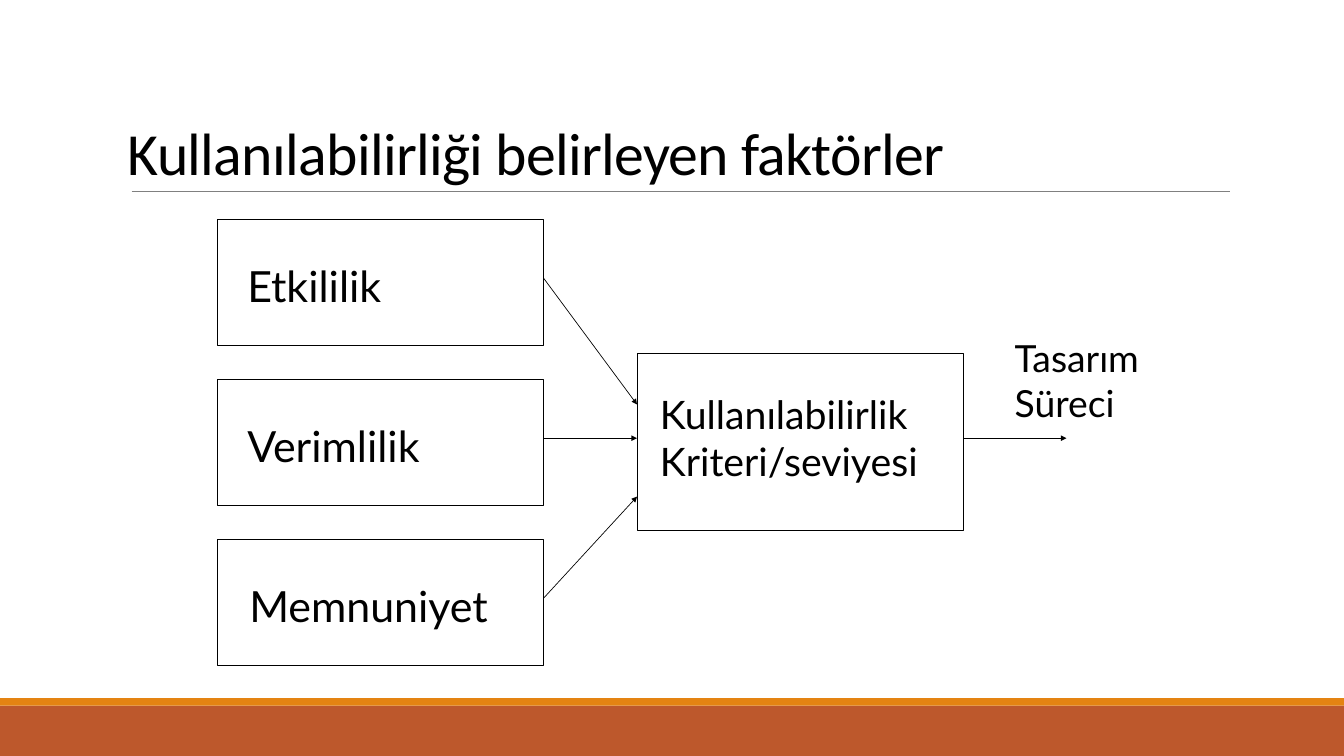
from dataclasses import dataclass

from lxml.etree import SubElement
from pptx import Presentation
from pptx.dml.color import RGBColor
from pptx.enum.shapes import MSO_CONNECTOR, MSO_SHAPE
from pptx.enum.text import MSO_ANCHOR, MSO_AUTO_SIZE, PP_ALIGN
from pptx.oxml.ns import qn
from pptx.util import Inches, Pt

BLACK = RGBColor(0x00, 0x00, 0x00)
GRAY = RGBColor(0x80, 0x80, 0x80)
RUST = RGBColor(0xBD, 0x58, 0x2C)
ORANGE = RGBColor(0xE4, 0x83, 0x12)

WIDTH, HEIGHT = Inches(20), Inches(11.25)


@dataclass(frozen=True)
class Box:
    """A rectangle in percent of the slide's width and height."""
    left: float
    top: float
    width: float
    height: float

    def emu(self) -> tuple[int, int, int, int]:
        return (*point(self.left, self.top), *point(self.width, self.height))


@dataclass(frozen=True)
class Label:
    text: str
    box: Box
    size: int


@dataclass(frozen=True)
class Line:
    """A line between two points in percent of the slide's size."""
    x1: float
    y1: float
    x2: float
    y2: float


def point(x: float, y: float) -> tuple[int, int]:
    return round(WIDTH * x / 100), round(HEIGHT * y / 100)


def add_bar(s, box: Box, color: RGBColor) -> None:
    sp = s.shapes.add_shape(MSO_SHAPE.RECTANGLE, *box.emu())
    sp.shadow.inherit = False
    sp.fill.solid()
    sp.fill.fore_color.rgb = color
    sp.line.fill.background()


def add_frame(s, box: Box) -> None:
    sp = s.shapes.add_shape(MSO_SHAPE.RECTANGLE, *box.emu())
    sp.shadow.inherit = False
    sp.fill.background()
    sp.line.color.rgb = BLACK
    sp.line.width = Pt(0.75)


def format_text(tf, font: str, size: int) -> None:
    for p in tf.paragraphs:
        p.alignment = PP_ALIGN.LEFT
        for r in p.runs:
            r.font.name = font
            r.font.size = Pt(size)
            r.font.color.rgb = BLACK


def add_label(s, label: Label) -> None:
    tf = s.shapes.add_textbox(*label.box.emu()).text_frame
    tf.word_wrap = False
    tf.auto_size = MSO_AUTO_SIZE.SHAPE_TO_FIT_TEXT
    tf.margin_left = tf.margin_right = Inches(0.2)
    tf.margin_top = tf.margin_bottom = Inches(0.1)
    tf.text = label.text
    format_text(tf, "Lato", label.size)


def add_line(s, line: Line, color: RGBColor, weight: float, arrow: bool) -> None:
    sp = s.shapes.add_connector(MSO_CONNECTOR.STRAIGHT,
                                *point(line.x1, line.y1), *point(line.x2, line.y2))
    sp.line.color.rgb = color
    sp.line.width = Pt(weight)
    if arrow:
        SubElement(sp.line._get_or_add_ln(), qn("a:tailEnd"), type="triangle")
    SubElement(sp._element.spPr, qn("a:effectLst"))


def set_title(s, text: str, box: Box) -> None:
    sp = s.shapes.title
    sp.left, sp.top, sp.width, sp.height = box.emu()
    tf = sp.text_frame
    tf.text = text
    tf.word_wrap = True
    tf.auto_size = MSO_AUTO_SIZE.NONE
    tf.vertical_anchor = MSO_ANCHOR.BOTTOM
    tf.paragraphs[0].line_spacing = 0.85
    format_text(tf, "Calibri", 64)
    for r in tf.paragraphs[0].runs:
        r._r.get_or_add_rPr().set("spc", "-70")


# Three factors stacked at an equal pitch, feeding one criterion box
FACTOR = Box(16.15, 28.98, 24.3, 16.71)
PITCH = 21.16
CRITERION = Box(47.4, 46.76, 24.3, 23.38)
FACTOR_RIGHT = FACTOR.left + FACTOR.width
CRITERION_RIGHT = CRITERION.left + CRITERION.width
ARROW_DROP = 7.82  # from a factor's top to its arrow
MIDDLE = FACTOR.top + PITCH + ARROW_DROP

# Factor name, label left, label width, height where its arrow ends
FACTORS = [
    ("Etkililik", 17.4, 13.05, 53.51),
    ("Verimlilik", 17.4, 15.95, MIDDLE),
    ("Memnuniyet", 17.55, 20.7, 65.69),
]
CRITERION_LABEL = Label("Kullanılabilirlik\nKriteri/seviyesi", Box(48.1, 50.76, 22.2, 14.4), 42)
PROCESS_LABEL = Label("Tasarım\nSüreci", Box(74.5, 43.47, 12, 13.78), 40)


def main() -> None:
    prs = Presentation()
    prs.slide_width, prs.slide_height = WIDTH, HEIGHT
    s = prs.slides.add_slide(prs.slide_layouts[5])

    add_bar(s, Box(0, 93.33, 100, 6.67), RUST)
    add_bar(s, Box(0, 92.36, 100, 0.97), ORANGE)
    add_line(s, Line(9.8, 25.33, 91.55, 25.33), GRAY, 0.5, arrow=False)
    set_title(s, "Kullanılabilirliği belirleyen faktörler", Box(9, 4.18, 82.5, 21.16))

    add_frame(s, CRITERION)
    for row, (name, left, width, arrow_end) in enumerate(FACTORS):
        top = FACTOR.top + row * PITCH
        add_frame(s, Box(FACTOR.left, top, FACTOR.width, FACTOR.height))
        add_label(s, Label(name, Box(left, top + 4.44, width, 8.71), 46))
        arrow = Line(FACTOR_RIGHT, top + ARROW_DROP, CRITERION.left, arrow_end)
        add_line(s, arrow, BLACK, 0.75, arrow=True)

    add_label(s, CRITERION_LABEL)
    add_line(s, Line(CRITERION_RIGHT, MIDDLE, 79.35, MIDDLE), BLACK, 0.75, arrow=True)
    add_label(s, PROCESS_LABEL)

    prs.save("out.pptx")


if __name__ == "__main__":
    main()
